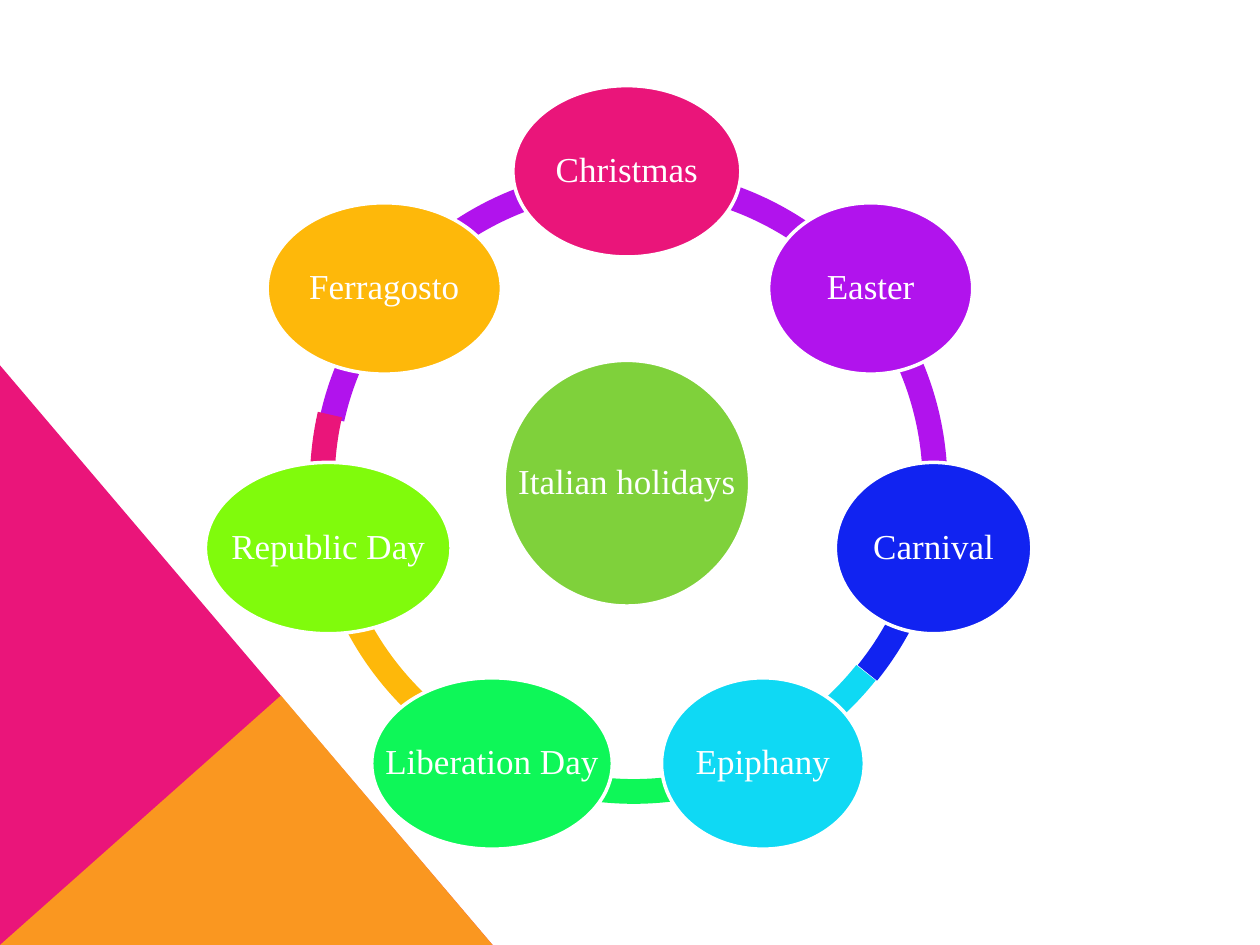
from lxml.etree import SubElement
from pptx import Presentation
from pptx.dml.color import RGBColor
from pptx.enum.shapes import MSO_SHAPE as Shape
from pptx.enum.text import MSO_ANCHOR as Anchor, PP_ALIGN as Align
from pptx.oxml.ns import qn
from pptx.util import Inches, Pt

WHITE = RGBColor(0xFF, 0xFF, 0xFF)
PINK = RGBColor(0xEA, 0x15, 0x7A)
PURPLE = RGBColor(0xB1, 0x13, 0xED)
BLUE = RGBColor(0x11, 0x23, 0xF1)
CYAN = RGBColor(0x0F, 0xD9, 0xF4)
GREEN = RGBColor(0x0E, 0xF7, 0x58)
LIME = RGBColor(0x80, 0xFB, 0x0C)
AMBER = RGBColor(0xFE, 0xB8, 0x0A)
LEAF = RGBColor(0x7F, 0xD1, 0x3B)

RING = 5.04   # outer diameter of the ring
BAND = 0.039  # ring thickness as a share of its diameter
HIGH = 1.36   # height of each holiday oval

# name, colour, oval (left, top, width), arc (left, top, from, to in degrees)
DAYS = [
    ("Christmas", PINK, (4.07, 0.68, 1.81), (2.46, 1.31, 162, 192.86)),
    ("Easter", PURPLE, (6.1, 1.61, 1.62), (2.48, 1.33, 192.53, 7.04)),
    ("Carnival", BLUE, (6.63, 3.67, 1.56), (2.48, 1.3, 7.44, 38.9)),
    ("Epiphany", CYAN, (5.25, 5.38, 1.61), (2.46, 1.31, 38.57, 69.43)),
    ("Liberation Day", GREEN, (2.95, 5.38, 1.91), (2.51, 1.34, 70.13, 101.02)),
    ("Republic Day", LIME, (1.63, 3.67, 1.95), (2.49, 1.27, 100.12, 130.43)),
    ("Ferragosto", AMBER, (2.12, 1.61, 1.86), (2.46, 1.31, 131.14, 162)),
]


class Painter:
    font, size = "Times New Roman", Pt(20)

    def __init__(self, slide):
        self.slide = slide

    def paint(self, shape, color):
        shape.shadow.inherit = False
        shape.fill.solid()
        shape.fill.fore_color.rgb = color
        shape.line.fill.background()
        return shape

    def block(self, kind, left, top, width, height, color):
        box = map(Inches, (left, top, width, height))
        return self.paint(self.slide.shapes.add_shape(kind, *box), color)

    def facet(self, points, color, alpha):
        """Draw a closed polygon with alpha percent opacity."""
        start, *rest = [(Inches(x), Inches(y)) for x, y in points]
        pen = self.slide.shapes.build_freeform(*start)
        pen.add_line_segments(rest, close=True)
        shape = self.paint(pen.convert_to_shape(), color)
        tint = shape.fill._xPr.find(qn("a:solidFill"))[0]
        SubElement(tint, qn("a:alpha"), val=str(alpha * 1000))

    def arc(self, left, top, begin, end, color):
        shape = self.block(Shape.BLOCK_ARC, left, top, RING, RING, color)
        # An angle is held in 60000ths of a degree, an adjustment in 100000ths
        for i, value in enumerate((begin * 0.6, end * 0.6, BAND)):
            shape.adjustments[i] = value

    def oval(self, text, left, top, width, height, color):
        shape = self.block(Shape.OVAL, left, top, width, height, color)
        shape.line.color.rgb = WHITE
        shape.line.width = Pt(2)
        frame = shape.text_frame
        frame.text = text
        frame.word_wrap = False
        frame.vertical_anchor = Anchor.MIDDLE
        frame.margin_left = frame.margin_right = Inches(0.03)
        frame.margin_top = frame.margin_bottom = Inches(0.03)
        para = frame.paragraphs[0]
        para.alignment = Align.CENTER
        para.line_spacing = 0.9
        font = para.runs[0].font
        font.name, font.size = self.font, self.size
        font.color.rgb = WHITE


def main():
    deck = Presentation()
    deck.slide_width, deck.slide_height = Inches(10), Inches(7.5)
    art = Painter(deck.slides.add_slide(deck.slide_layouts[6]))

    art.block(Shape.RIGHT_TRIANGLE, 0, 2.9, 3.91, 4.6, PINK)
    art.facet([(0, 7.5), (2.23, 5.52), (3.91, 7.5)], AMBER, 80)

    for _, color, _, arc in reversed(DAYS):
        art.arc(*arc, color)
    art.oval("Italian holidays", 4, 2.86, 1.95, 1.95, LEAF)
    for name, color, place, _ in DAYS:
        art.oval(name, *place, HIGH, color)

    deck.save("out.pptx")


if __name__ == "__main__":
    main()
